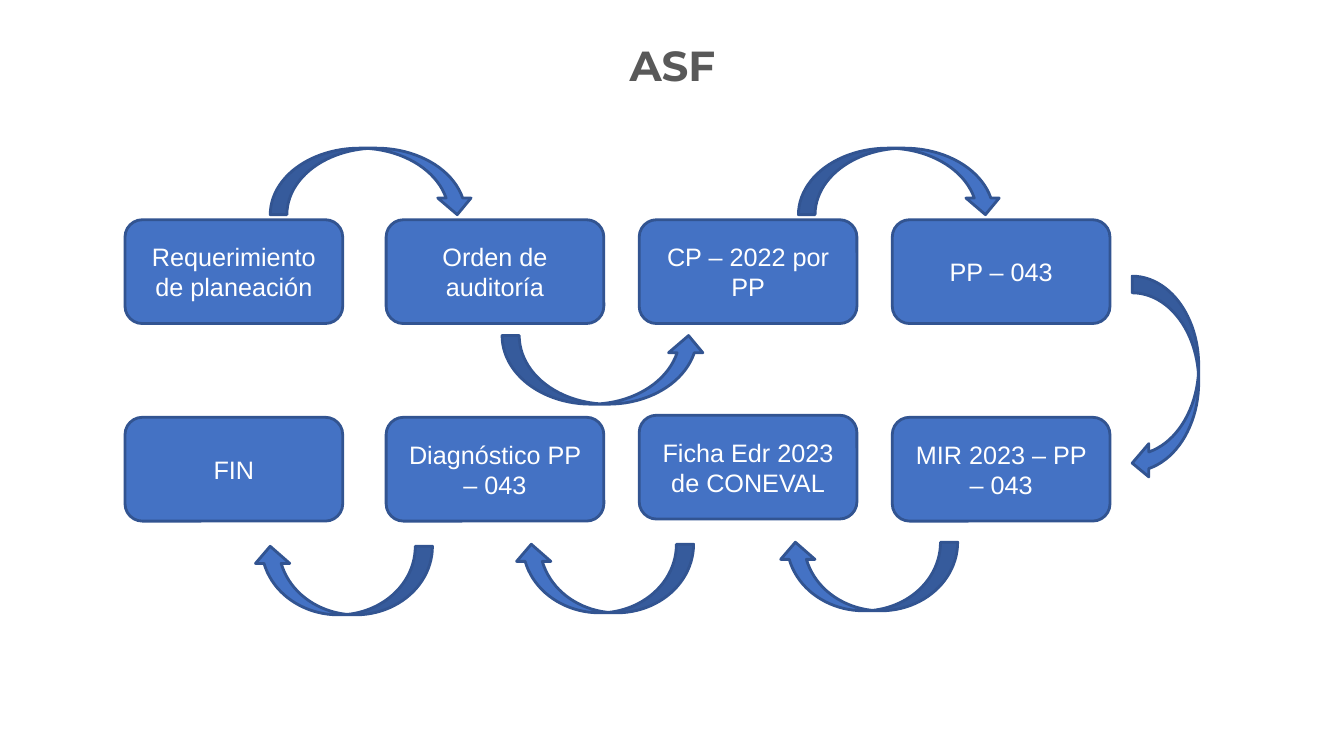
from dataclasses import dataclass

from pptx import Presentation
from pptx import util as u
from pptx.dml.color import RGBColor
from pptx.enum import shapes, text

SLIDE_WIDTH = u.Inches(13.33)
SLIDE_HEIGHT = u.Inches(7.5)

BLUE = "4472C4"
DARK_BLUE = "325491"
WHITE = "FFFFFF"
GREY = "595959"

COLUMNS = (9.3, 28.73, 47.56, 66.39)
ROWS = (29.07, 55.2)
STEP_WIDTH, STEP_HEIGHT = 16.2, 13.73
FORWARD_WIDTH, RETURN_WIDTH = 15.15, 13.35
ARROW_HEIGHT, LOWER_ARROW_HEIGHT = 8.8, 9.07


@dataclass(frozen=True)
class Area:
    left: float
    top: float
    width: float
    height: float

    def lengths(self) -> tuple[int, int, int, int]:
        return (
            round(SLIDE_WIDTH * self.left / 100),
            round(SLIDE_HEIGHT * self.top / 100),
            round(SLIDE_WIDTH * self.width / 100),
            round(SLIDE_HEIGHT * self.height / 100),
        )


@dataclass(frozen=True)
class Step:
    label: str
    column: int
    row: int
    lift: float = 0


@dataclass(frozen=True)
class Arrow:
    area: Area
    rotation: int = 0
    flips: tuple[str, ...] = ()


STEPS = (
    Step("Requerimiento de planeación", 0, 0),
    Step("Orden de auditoría", 1, 0),
    Step("CP – 2022 por PP", 2, 0),
    Step("PP – 043", 3, 0),
    Step("MIR 2023 – PP – 043", 3, 1),
    Step("Ficha Edr 2023 de CONEVAL", 2, 1, lift=0.27),
    Step("Diagnóstico PP – 043", 1, 1),
    Step("FIN", 0, 1),
)

FORWARD_ARROWS = (
    Arrow(Area(20.11, 19.6, FORWARD_WIDTH, ARROW_HEIGHT)),
    Arrow(Area(37.36, 44.4, FORWARD_WIDTH, LOWER_ARROW_HEIGHT), flips=("flipV",)),
    Arrow(Area(59.41, 19.6, FORWARD_WIDTH, ARROW_HEIGHT)),
    Arrow(Area(79.14, 45.6, FORWARD_WIDTH, ARROW_HEIGHT), rotation=90),
)

RETURN_ARROWS = tuple(
    Arrow(Area(left, top, RETURN_WIDTH, LOWER_ARROW_HEIGHT), flips=("flipH", "flipV"))
    for left, top in ((57.91, 71.73), (38.26, 72), (18.83, 72.27))
)


def colour(value: str) -> RGBColor:
    return RGBColor.from_string(value)


def write(shape, words: str, font_name: str, size: float, font_colour: str, bold: bool = False):
    shape.text_frame.word_wrap = True
    shape.text_frame.text = words
    paragraph = shape.text_frame.paragraphs[0]
    paragraph.alignment = text.PP_ALIGN.CENTER
    font = paragraph.runs[0].font
    font.name = font_name
    font.size = u.Pt(size)
    font.bold = bold
    font.color.rgb = colour(font_colour)
    return paragraph


def draw_shape(slide, kind: shapes.MSO_SHAPE, area: Area):
    shape = slide.shapes.add_shape(kind, *area.lengths())
    shape.shadow.inherit = False
    shape.fill.solid()
    shape.fill.fore_color.rgb = colour(BLUE)
    shape.line.color.rgb = colour(DARK_BLUE)
    shape.line.width = u.Pt(2)
    return shape


def draw_title(slide, words: str) -> None:
    title = slide.shapes.add_textbox(*Area(6.9, 5.33, 86.27, 8.8).lengths())
    frame = title.text_frame
    frame.margin_left = frame.margin_right = u.Inches(0.05)
    frame.vertical_anchor = text.MSO_ANCHOR.TOP
    write(title, words, "Montserrat", 30, GREY, bold=True).line_spacing = 0.9


def draw_step(slide, step: Step) -> None:
    area = Area(COLUMNS[step.column], ROWS[step.row] - step.lift, STEP_WIDTH, STEP_HEIGHT)
    shape = draw_shape(slide, shapes.MSO_SHAPE.ROUNDED_RECTANGLE, area)
    shape.text_frame.vertical_anchor = text.MSO_ANCHOR.MIDDLE
    write(shape, step.label, "Arial", 18, WHITE)


def draw_arrow(slide, arrow: Arrow) -> None:
    shape = draw_shape(slide, shapes.MSO_SHAPE.CURVED_DOWN_ARROW, arrow.area)
    shape.rotation = arrow.rotation
    for flip in arrow.flips:
        shape.element.spPr.xfrm.set(flip, "1")


def main() -> None:
    presentation = Presentation()
    presentation.slide_width = SLIDE_WIDTH
    presentation.slide_height = SLIDE_HEIGHT
    slide = presentation.slides.add_slide(presentation.slide_layouts[6])
    draw_title(slide, "ASF")
    for step in STEPS:
        draw_step(slide, step)
    for arrow in FORWARD_ARROWS + RETURN_ARROWS:
        draw_arrow(slide, arrow)
    presentation.save("out.pptx")


if __name__ == "__main__":
    main()
